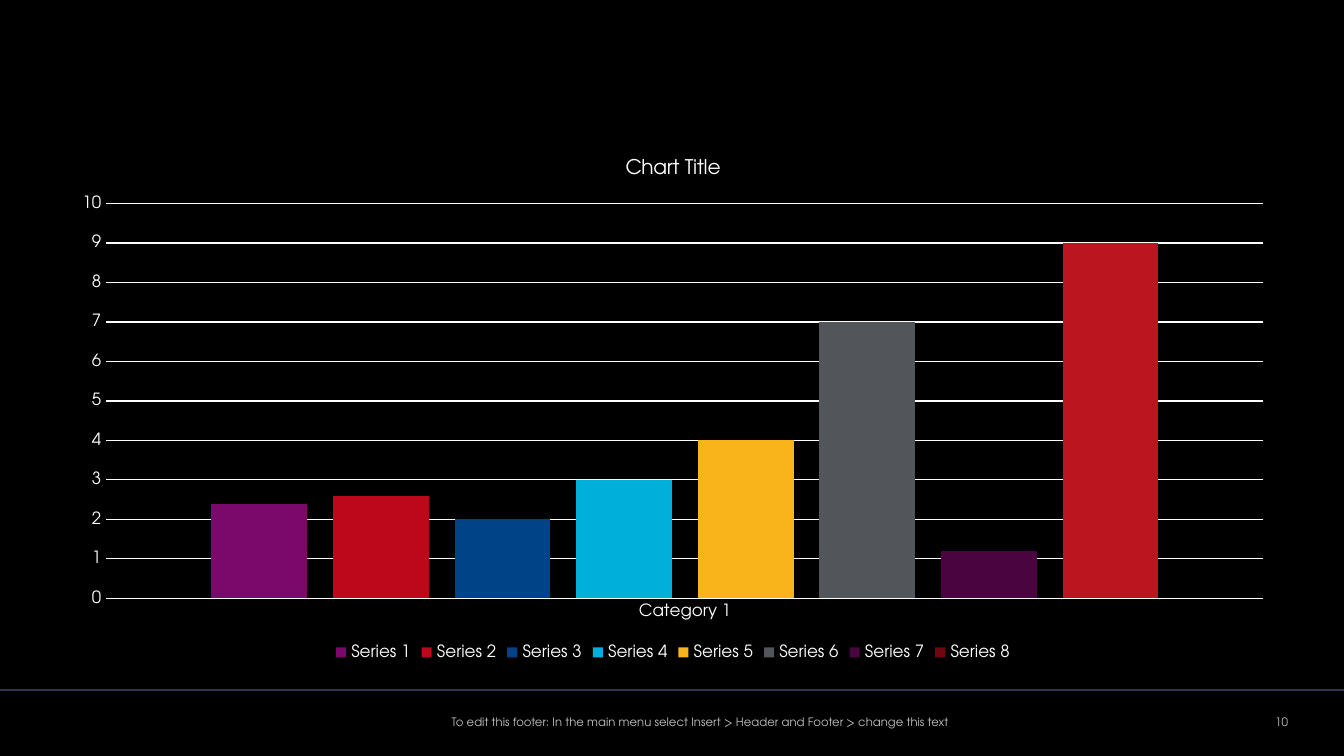
from lxml import etree
from pptx import Presentation
from pptx.chart.data import CategoryChartData
from pptx.dml.color import RGBColor
from pptx.enum.chart import XL_CHART_TYPE as ChartType, XL_LEGEND_POSITION as LegendPosition
from pptx.enum.chart import XL_TICK_MARK as TickMark
from pptx.enum.shapes import MSO_CONNECTOR as Connector
from pptx.enum.text import MSO_ANCHOR as Anchor, PP_ALIGN as Align
from pptx.oxml.ns import qn
from pptx.util import Pt

FONT = "TeX Gyre Adventor"
WHITE = "FFFFFF"


def color(hex_string):
    return RGBColor.from_string(hex_string)


def format_font(font, size, hex_string):
    for name, value in {"name": FONT, "size": Pt(size), "bold": False}.items():
        setattr(font, name, value)
    font.color.rgb = color(hex_string)


presentation = Presentation()
presentation.slide_width, presentation.slide_height = Pt(720), Pt(405)
slide = presentation.slides.add_slide(presentation.slide_layouts[6])
slide.background.fill.solid()
slide.background.fill.fore_color.rgb = color("000000")

# Footer rule
rule = slide.shapes.add_connector(Connector.STRAIGHT, Pt(0), Pt(369.5), Pt(722), Pt(369.5))
rule.line.color.rgb = color("2F364D")
rule.line.width = Pt(1)
etree.SubElement(rule._element.spPr, qn("a:effectLst"))

# Column chart
series_values = [
    ("Series 1", 2.4, "7B096B"),
    ("Series 2", 2.6, "BD081B"),
    ("Series 3", 2, "004386"),
    ("Series 4", 3, "00B0DA"),
    ("Series 5", 4, "F9B41B"),
    ("Series 6", 7, "52565A"),
    ("Series 7", 1.2, "4A0540"),
    ("Series 8", 9, "710510"),
]
chart_data = CategoryChartData()
chart_data.categories = ["Category 1"]
for name, value, _ in series_values:
    chart_data.add_series(name, [value])

chart = slide.shapes.add_chart(
    ChartType.COLUMN_CLUSTERED, Pt(31), Pt(73.5), Pt(659), Pt(283), chart_data
).chart
format_font(chart.font, 9, WHITE)
chart.has_title = True
chart.chart_title.include_in_layout = False
chart.chart_title.text_frame.text = "Chart Title"
format_font(chart.chart_title.text_frame.paragraphs[0].runs[0].font, 10.8, WHITE)

plot = chart.plots[0]
for name, value in {"gap_width": 219, "overlap": -27, "vary_by_categories": False}.items():
    setattr(plot, name, value)
for series, (_, _, fill_color) in zip(plot.series, series_values):
    series.format.fill.solid()
    series.format.fill.fore_color.rgb = color(fill_color)
last_column = plot.series[-1].points[0].format.fill
last_column.solid()
last_column.fore_color.rgb = color("BB1520")

category_axis, value_axis = chart.category_axis, chart.value_axis
for axis in (category_axis, value_axis):
    axis.major_tick_mark = axis.minor_tick_mark = TickMark.NONE
    format_font(axis.tick_labels.font, 9, WHITE)
value_axis.minimum_scale, value_axis.maximum_scale, value_axis.major_unit = 0, 10, 1
value_axis.has_major_gridlines = True
value_axis.format.line.fill.background()
for line in (category_axis.format.line, value_axis.major_gridlines.format.line):
    line.color.rgb = color(WHITE)
    line.width = Pt(0.75)

chart.has_legend = True
chart.legend.position = LegendPosition.BOTTOM
chart.legend.include_in_layout = False
format_font(chart.legend.font, 9, WHITE)

# Footer texts: text, left, width, right margin, alignment
footer_texts = [
    ("To edit this footer: In the main menu select Insert > Header and Footer > change this text",
     126, 498, 7.2, Align.CENTER),
    ("10", 641.5, 48.5, 0, Align.RIGHT),
]
for text, left, width, margin_right, alignment in footer_texts:
    frame = slide.shapes.add_textbox(Pt(left), Pt(374.5), Pt(width), Pt(24)).text_frame
    frame_format = {"word_wrap": True, "vertical_anchor": Anchor.MIDDLE,
                    "margin_right": Pt(margin_right), "text": text}
    for name, value in frame_format.items():
        setattr(frame, name, value)
    paragraph = frame.paragraphs[0]
    paragraph.alignment = alignment
    format_font(paragraph.runs[0].font, 6.2, "BFBFBF")

presentation.save("out.pptx")
